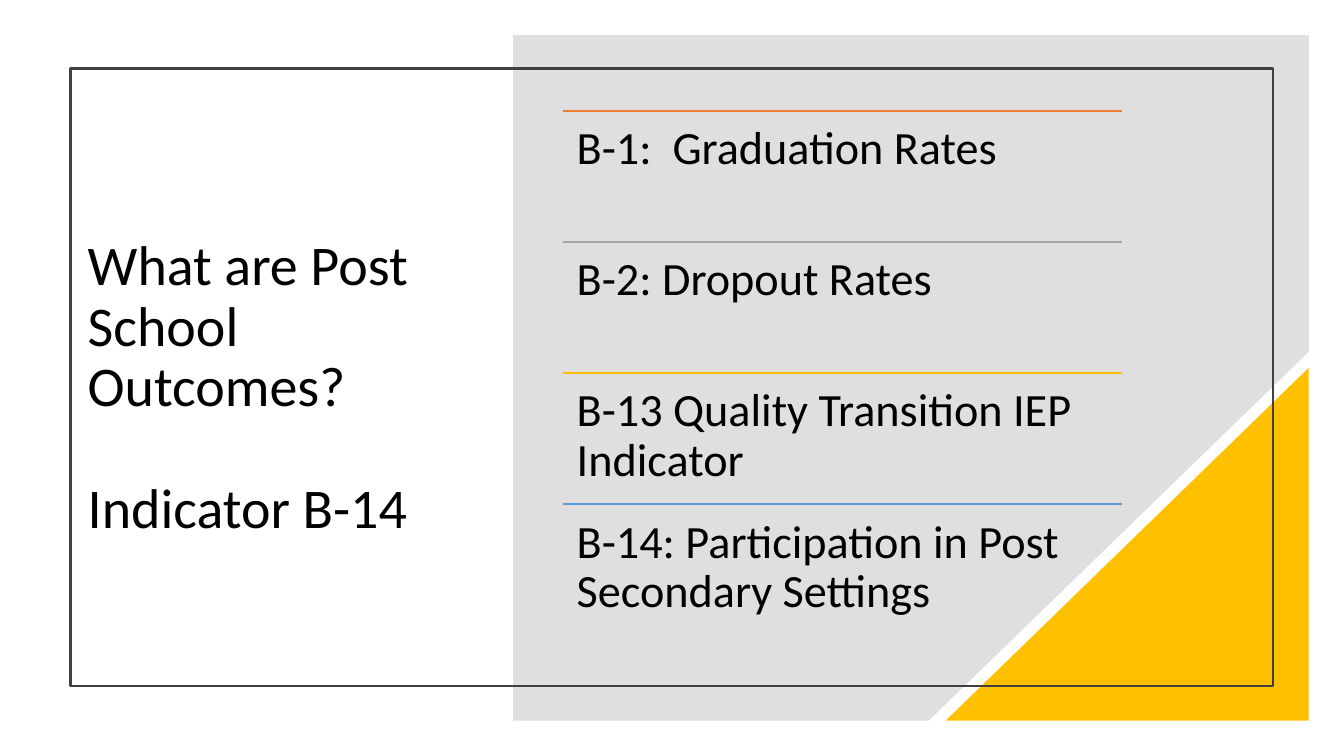
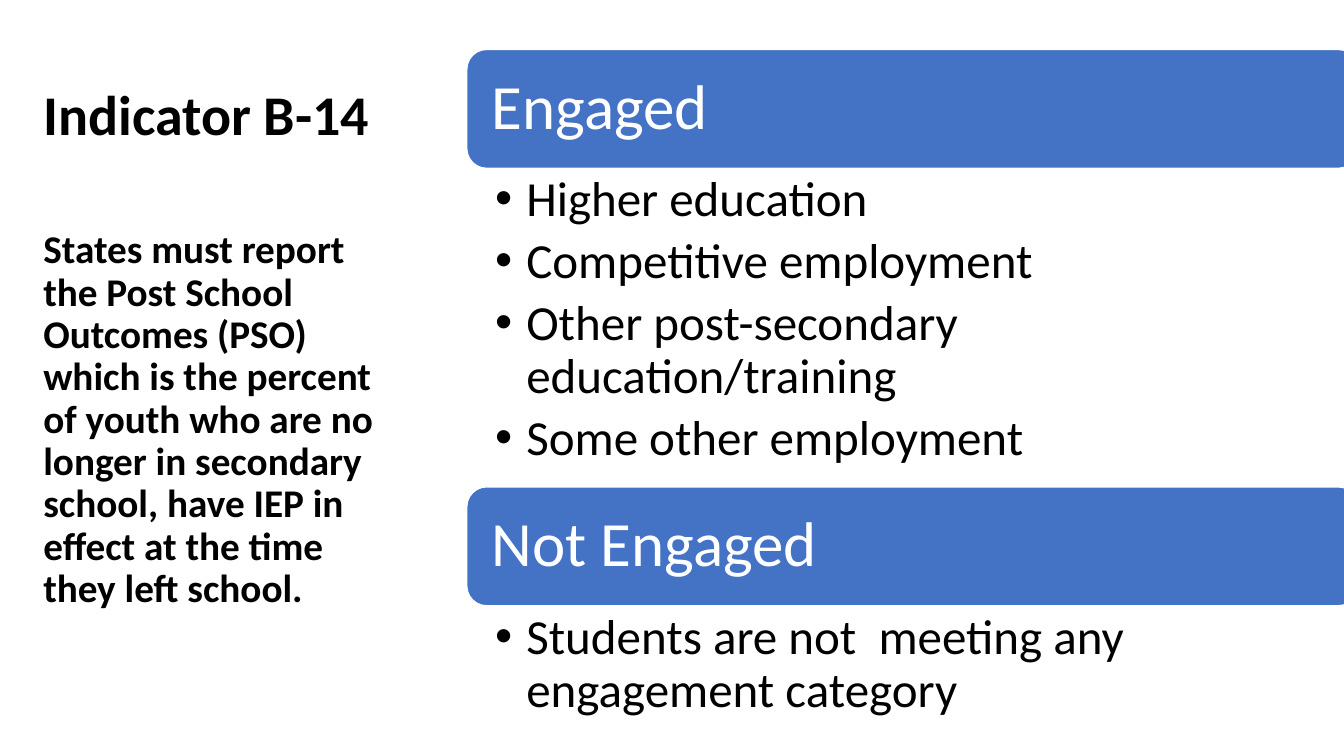
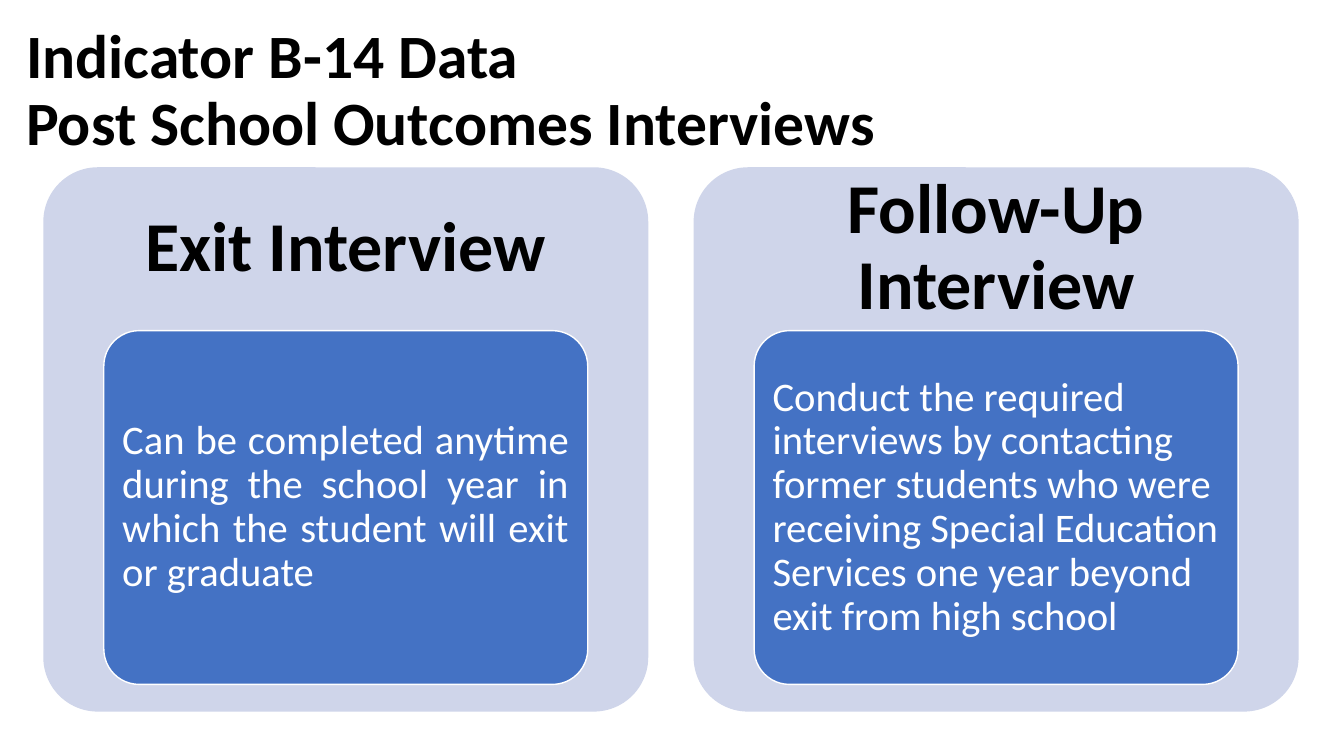
from dataclasses import dataclass

from lxml.etree import SubElement
from pptx import Presentation
from pptx.dml.color import RGBColor
from pptx.enum.shapes import MSO_CONNECTOR, MSO_SHAPE
from pptx.enum.text import MSO_ANCHOR, MSO_AUTO_SIZE, PP_ALIGN
from pptx.oxml.ns import qn
from pptx.util import Pt

PX = 9144
TITLE_ONLY, COMPARISON = 5, 4


@dataclass(frozen=True)
class Theme:
    font: str = "Calibri"
    ink: str = "000000"
    paper: str = "FFFFFF"
    blue: str = "4472C4"
    pale: str = "CFD5EA"
    gold: str = "FFC000"
    orange: str = "ED7D31"
    silver: str = "A5A5A5"
    sky: str = "5B9BD5"
    panel: str = "808080"
    frame: str = "404040"
    title: int = 40
    wide_title: int = 44
    statement: int = 28
    indicator: int = 33
    bar: int = 45
    bullet: int = 35
    heading: int = 50
    detail: int = 29


THEME = Theme()


def px(*lengths):
    return [length * PX for length in lengths]


def rgb(color):
    return RGBColor.from_string(color)


def write(holder, *lines, size, color=THEME.ink, bold=False, align=PP_ALIGN.LEFT,
          anchor=MSO_ANCHOR.TOP, inset=(10, 5, 10, 5), gap=0, hang=0):
    frame = holder.text_frame
    frame.word_wrap = True
    frame.auto_size = MSO_AUTO_SIZE.NONE
    frame.vertical_anchor = anchor
    (frame.margin_left, frame.margin_top,
     frame.margin_right, frame.margin_bottom) = px(*inset)
    for index, line in enumerate(lines):
        paragraph = frame.paragraphs[0] if index == 0 else frame.add_paragraph()
        paragraph.alignment = align
        paragraph.line_spacing = 0.9
        paragraph.space_before = Pt(gap if index else 0)
        paragraph.space_after = Pt(0)
        properties = paragraph._p.get_or_add_pPr()
        properties.set("marL", str(hang * PX))
        properties.set("indent", str(-hang * PX))
        if hang:
            SubElement(properties, qn("a:buFont"), typeface="Arial")
            SubElement(properties, qn("a:buChar"), char="•")
        else:
            SubElement(properties, qn("a:buNone"))
        run = paragraph.add_run()
        run.text = line
        run.font.name = THEME.font
        run.font.size = Pt(size)
        run.font.bold = bold
        run.font.color.rgb = rgb(color)


def place(holder, box):
    holder.left, holder.top, holder.width, holder.height = px(*box)
    return holder


def add_title(slide, box, *lines, **style):
    write(place(slide.shapes.title, box), *lines, anchor=MSO_ANCHOR.MIDDLE, **style)


def add_text(slide, box, *lines, **style):
    write(slide.shapes.add_textbox(*px(*box)), *lines, **style)


def paint(shape, fill=None, line=None, weight=1):
    shape.shadow.inherit = False
    if fill:
        shape.fill.solid()
        shape.fill.fore_color.rgb = rgb(fill)
    else:
        shape.fill.background()
    if line:
        shape.line.color.rgb = rgb(line)
        shape.line.width = Pt(weight)
    else:
        shape.line.fill.background()
    return shape


def add_box(slide, kind, box, corner=None, **look):
    shape = paint(slide.shapes.add_shape(kind, *px(*box)), **look)
    if corner:
        shape.adjustments[0] = corner
    return shape


def add_rule(slide, left, top, width, color):
    rule = slide.shapes.add_connector(
        MSO_CONNECTOR.STRAIGHT, *px(left, top, left + width, top))
    rule.line.color.rgb = rgb(color)
    rule.line.width = Pt(1)
    SubElement(rule._element.spPr, qn("a:effectLst"))


def add_panel(slide, corners, color, opacity):
    builder = slide.shapes.build_freeform(*corners[0], scale=PX)
    builder.add_line_segments(corners[1:], close=True)
    panel = paint(builder.convert_to_shape(), fill=color)
    tint = panel._element.spPr.find(qn("a:solidFill"))[0]
    SubElement(tint, qn("a:alpha"), val=str(opacity * 1000))


def build_outcomes(deck):
    slide = deck.slides.add_slide(deck.slide_layouts[TITLE_ONLY])
    add_title(slide, (77, 141, 354, 490), "What are Post School Outcomes?",
              "Indicator B-14", size=THEME.title, gap=44)
    add_panel(slide, [(509, 35), (1298, 35), (1298, 349), (921, 715), (509, 715)],
              THEME.panel, 25)
    corner = add_box(slide, MSO_SHAPE.RIGHT_TRIANGLE, (938, 365, 360, 350),
                     fill=THEME.gold)
    corner._element.spPr.xfrm.set("flipH", "1")
    add_box(slide, MSO_SHAPE.RECTANGLE, (70, 68, 1193, 613),
            line=THEME.frame, weight=1.5)

    indicators = [
        ("B-1:  Graduation Rates", THEME.orange),
        ("B-2: Dropout Rates", THEME.silver),
        ("B-13 Quality Transition IEP Indicator", THEME.gold),
        ("B-14: Participation in Post Secondary Settings", THEME.sky),
    ]
    left, first, width, pitch = 558, 110, 555, 130
    for row, (indicator, color) in enumerate(indicators):
        top = first + row * pitch
        add_rule(slide, left, top, width, color)
        add_text(slide, (left, top, width, pitch), indicator,
                 size=THEME.indicator, inset=(14, 14, 14, 14))


def build_engagement(deck):
    slide = deck.slides.add_slide(deck.slide_layouts[COMPARISON])
    add_title(slide, (33, 44, 405, 145), "Indicator B-14",
              size=THEME.title, bold=True)
    statement, engaged, spare, not_engaged = list(slide.placeholders)[1:]
    spare._element.getparent().remove(spare._element)
    write(place(statement, (33, 223, 356, 459)),
          "States must report the Post School Outcomes (PSO) which is the percent "
          "of youth who are no longer in secondary school, have IEP in effect at "
          "the time they left school.", size=THEME.statement, bold=True)

    groups = [
        ("Engaged", engaged, 49, 316,
         ["Higher education", "Competitive employment",
          "Other post-secondary education/training", "Some other employment"]),
        ("Not Engaged", not_engaged, 483, 120,
         ["Students are not  meeting any engagement category"]),
    ]
    left, width, bar_height = 463, 884, 118
    for name, category_list, top, list_height, categories in groups:
        bar = add_box(slide, MSO_SHAPE.ROUNDED_RECTANGLE,
                      (left, top, width, bar_height),
                      fill=THEME.blue, line=THEME.paper)
        write(bar, name, size=THEME.bar, color=THEME.paper,
              anchor=MSO_ANCHOR.MIDDLE, inset=(19, 19, 19, 19))
        write(place(category_list, (left, top + bar_height, width, list_height)),
              *categories, size=THEME.bullet, inset=(28, 6, 35, 6),
              gap=6.5, hang=31)


def build_interviews(deck):
    slide = deck.slides.add_slide(deck.slide_layouts[TITLE_ONLY])
    add_title(slide, (16, 19, 1273, 145), "Indicator B-14 Data",
              "Post School Outcomes Interviews", size=THEME.wide_title, bold=True)
    interviews = [
        ("Exit Interview", PP_ALIGN.JUSTIFY,
         "Can be completed anytime during the school year in which the student "
         "will exit or graduate"),
        ("Follow-Up Interview", PP_ALIGN.LEFT,
         "Conduct the required interviews by contacting former students who were "
         "receiving Special Education Services one year beyond exit from high "
         "school"),
    ]
    first, top, width, pitch, heading_height = 43, 166, 600, 645, 162
    for column, (heading, align, detail) in enumerate(interviews):
        left = first + column * pitch
        add_box(slide, MSO_SHAPE.ROUNDED_RECTANGLE, (left, top, width, 540),
                corner=0.1, fill=THEME.pale)
        add_text(slide, (left, top, width, heading_height), heading,
                 size=THEME.heading, bold=True, align=PP_ALIGN.CENTER,
                 anchor=MSO_ANCHOR.MIDDLE, inset=(21, 21, 21, 21))
        card = add_box(slide, MSO_SHAPE.ROUNDED_RECTANGLE,
                       (left + 60, top + heading_height, width - 120, 351),
                       corner=0.1, fill=THEME.blue, line=THEME.paper)
        write(card, detail, size=THEME.detail, color=THEME.paper, align=align,
              anchor=MSO_ANCHOR.MIDDLE, inset=(8, 6, 8, 6))


def main():
    deck = Presentation()
    deck.slide_width, deck.slide_height = px(1333, 750)
    build_outcomes(deck)
    build_engagement(deck)
    build_interviews(deck)
    deck.save("out.pptx")


if __name__ == "__main__":
    main()
